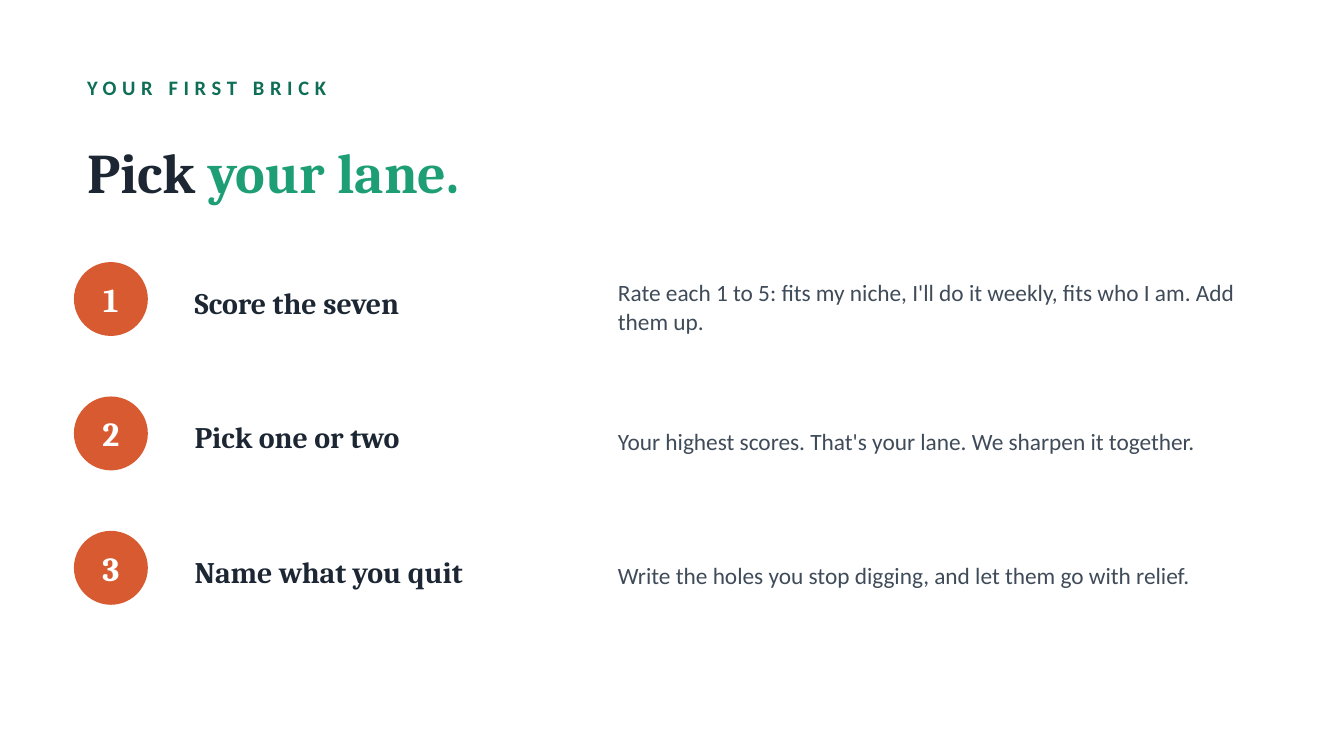
import dataclasses

import pptx
import pptx.dml.color
import pptx.enum.shapes
import pptx.enum.text
import pptx.util

Inches = pptx.util.Inches
Pt = pptx.util.Pt
RGBColor = pptx.dml.color.RGBColor
Align = pptx.enum.text.PP_ALIGN

INK = RGBColor(0x1C, 0x27, 0x33)
SLATE = RGBColor(0x3F, 0x4B, 0x59)
DEEP_GREEN = RGBColor(0x0F, 0x6E, 0x56)
GREEN = RGBColor(0x1D, 0x9E, 0x75)
ORANGE = RGBColor(0xD8, 0x5A, 0x30)
WHITE = RGBColor(0xFF, 0xFF, 0xFF)

EYEBROW = {"name": "Calibri", "size": Pt(11), "bold": True}
HEADLINE = {"name": "Cambria", "size": Pt(30), "bold": True}
NUMBER = {"name": "Cambria", "size": Pt(18), "bold": True}
STEP_NAME = {"name": "Cambria", "size": Pt(16), "bold": True}
DETAIL = {"name": "Calibri", "size": Pt(12.5), "bold": False}

SLIDE_WIDTH = 10
SLIDE_HEIGHT = SLIDE_WIDTH * 9 / 16
MARGIN = 0.55
CONTENT_WIDTH = 8.9
FIRST_ROW = 1.9
ROW_PITCH = 1.0
BADGE = 0.55


@dataclasses.dataclass(frozen=True)
class Box:
    left: float
    top: float
    width: float
    height: float

    def lengths(self) -> tuple:
        return tuple(Inches(v) for v in dataclasses.astuple(self))


@dataclasses.dataclass(frozen=True)
class Step:
    name: str
    detail: str


STEPS = [
    Step("Score the seven",
         "Rate each 1 to 5: fits my niche, I'll do it weekly, fits who I am. Add them up."),
    Step("Pick one or two",
         "Your highest scores. That's your lane. We sharpen it together."),
    Step("Name what you quit",
         "Write the holes you stop digging, and let them go with relief."),
]


def fill_text(shape, parts: list, style: dict, align=Align.LEFT):
    """Write (text, colour) parts into one paragraph and return it."""
    frame = shape.text_frame
    frame.word_wrap = True
    frame.auto_size = pptx.enum.text.MSO_AUTO_SIZE.NONE
    frame.vertical_anchor = pptx.enum.text.MSO_ANCHOR.MIDDLE
    paragraph = frame.paragraphs[0]
    paragraph.alignment = align
    for text, colour in parts:
        run = paragraph.add_run()
        run.text = text
        for attribute, value in style.items():
            setattr(run.font, attribute, value)
        run.font.color.rgb = colour
    return paragraph


def add_text(slide, box: Box, text: str, colour: RGBColor, style: dict, align=Align.LEFT):
    return fill_text(slide.shapes.add_textbox(*box.lengths()), [(text, colour)], style, align)


def add_step(slide, number: int, step: Step) -> None:
    top = FIRST_ROW + (number - 1) * ROW_PITCH

    # Numbered badge
    badge_box = Box(MARGIN, top + 0.05, BADGE, BADGE)
    badge = slide.shapes.add_shape(pptx.enum.shapes.MSO_SHAPE.OVAL, *badge_box.lengths())
    badge.shadow.inherit = False
    badge.fill.solid()
    badge.fill.fore_color.rgb = ORANGE
    badge.line.fill.background()
    add_text(slide, badge_box, str(number), WHITE, NUMBER, Align.CENTER)

    # Name and explanation
    add_text(slide, Box(1.35, top, 3, 0.7), step.name, INK, STEP_NAME)
    detail = add_text(slide, Box(4.5, top, 5, 0.75), step.detail, SLATE, DETAIL)
    detail.line_spacing = 1.05


def main() -> None:
    deck = pptx.Presentation()
    deck.slide_width = Inches(SLIDE_WIDTH)
    deck.slide_height = Inches(SLIDE_HEIGHT)
    slide = deck.slides.add_slide(deck.slide_layouts[5])

    # Letter-spaced eyebrow
    eyebrow = add_text(slide, Box(MARGIN, 0.5, CONTENT_WIDTH, 0.3),
                       "YOUR FIRST BRICK", DEEP_GREEN, EYEBROW)
    eyebrow.runs[0]._r.get_or_add_rPr().set("spc", "300")

    # Two-colour headline
    title = slide.shapes.title
    title.left, title.top, title.width, title.height = Box(
        MARGIN, 0.85, CONTENT_WIDTH, 0.85).lengths()
    fill_text(title, [("Pick ", INK), ("your lane.", GREEN)], HEADLINE)

    # Three steps
    for number, step in enumerate(STEPS, start=1):
        add_step(slide, number, step)

    deck.save("out.pptx")


if __name__ == "__main__":
    main()
